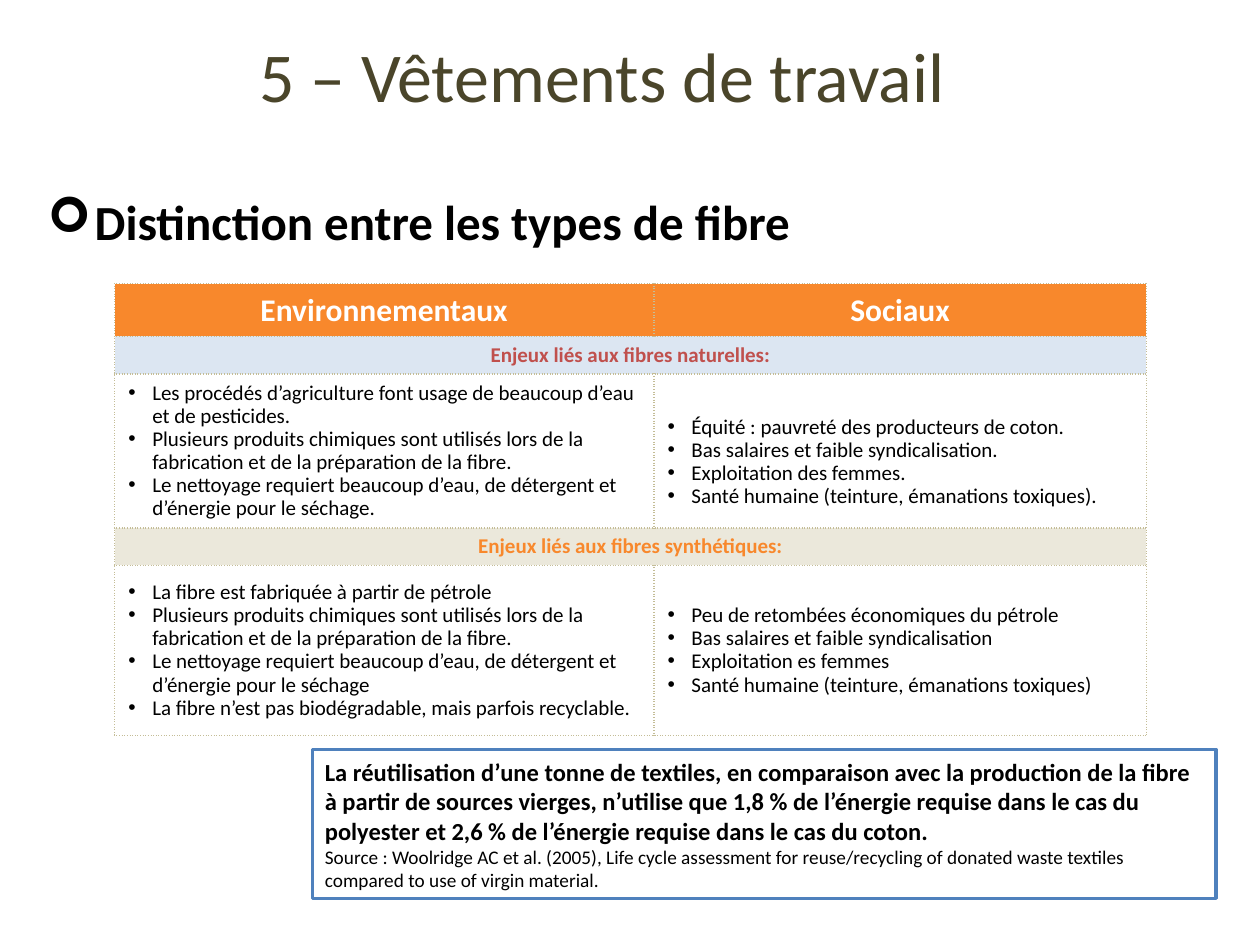
from lxml.etree import SubElement
from pptx import Presentation
from pptx.dml.color import RGBColor
from pptx.enum.shapes import MSO_SHAPE
from pptx.enum.text import MSO_ANCHOR, PP_ALIGN
from pptx.oxml.ns import qn
from pptx.util import Cm, Pt

# Content
TITLE = "5 – Vêtements de travail"
HEADING = "Distinction entre les types de fibre"
COLUMNS = ["Environnementaux", "Sociaux"]
SECTIONS = [
    {
        "name": "Enjeux liés aux fibres naturelles:", "color": "C0504D", "fill": "DCE6F2",
        "issues": [
            ["Les procédés d’agriculture font usage de beaucoup d’eau et de pesticides.",
             "Plusieurs produits chimiques sont utilisés lors de la fabrication et de la préparation de la fibre.",
             "Le nettoyage requiert beaucoup d’eau, de détergent et d’énergie pour le séchage."],
            ["Équité : pauvreté des producteurs de coton.",
             "Bas salaires et faible syndicalisation.",
             "Exploitation des femmes.",
             "Santé humaine (teinture, émanations toxiques)."],
        ],
        "extra_tops": [0, 0.46],
    },
    {
        "name": "Enjeux liés aux fibres synthétiques:", "color": "F8882C", "fill": "EBE8DB",
        "issues": [
            ["La fibre est fabriquée à partir de pétrole",
             "Plusieurs produits chimiques sont utilisés lors de la fabrication et de la préparation de la fibre.",
             "Le nettoyage requiert beaucoup d’eau, de détergent et d’énergie pour le séchage",
             "La fibre n’est pas biodégradable, mais parfois recyclable."],
            ["Peu de retombées économiques du pétrole",
             "Bas salaires et faible syndicalisation",
             "Exploitation es femmes",
             "Santé humaine (teinture, émanations toxiques)"],
        ],
        "extra_tops": [0, 0],
    },
]
FINDING = (
    "La réutilisation d’une tonne de textiles, en comparaison avec la production de la fibre "
    "à partir de sources vierges, n’utilise que 1,8 % de l’énergie requise dans le cas du "
    "polyester et 2,6 % de l’énergie requise dans le cas du coton."
)
CITATION = (
    "Source : Woolridge AC et al. (2005), Life cycle assessment for reuse/recycling of "
    "donated waste textiles compared to use of virgin material."
)

# Table measures in centimetres
COLUMN_WIDTHS = [10.87, 9.93]
ROW_HEIGHTS = [1.04, 0.69, 3.1, 0.71, 3.43]
MARGIN_X, MARGIN_Y = 0.28, 0.15


def rgb(value):
    return RGBColor.from_string(value)


def add_bullet(paragraph, character, font_name, indent):
    properties = paragraph._p.get_or_add_pPr()
    properties.set("marL", str(Cm(indent)))
    properties.set("indent", str(-Cm(indent)))
    SubElement(properties, qn("a:buFont"), typeface=font_name)
    SubElement(properties, qn("a:buChar"), char=character)


def write(frame, texts, size, color="000000", bold=False, align=PP_ALIGN.LEFT,
          spacing=None, bullet=None):
    """Fill a text frame with one paragraph per text."""
    frame.word_wrap = True
    for index, text in enumerate(texts):
        paragraph = frame.paragraphs[0] if index == 0 else frame.add_paragraph()
        paragraph.text = text
        paragraph.alignment = align
        if spacing:
            paragraph.line_spacing = spacing
        if bullet:
            add_bullet(paragraph, *bullet)
        font = paragraph.font
        font.name, font.size, font.bold = "Calibri", Pt(size), bold
        font.color.rgb = rgb(color)


def style_cell(cell, fill, extra_top=0):
    properties = cell._tc.get_or_add_tcPr()
    for side in ("lnL", "lnR", "lnT", "lnB"):
        line = SubElement(properties, qn(f"a:{side}"), w=str(Pt(1)))
        solid = SubElement(line, qn("a:solidFill"))
        SubElement(solid, qn("a:srgbClr"), val="C4BD97")
        SubElement(line, qn("a:prstDash"), val="sysDot")
    cell.fill.solid()
    cell.fill.fore_color.rgb = rgb(fill)
    cell.margin_left = cell.margin_right = Cm(MARGIN_X)
    cell.margin_top, cell.margin_bottom = Cm(MARGIN_Y + extra_top), Cm(MARGIN_Y)


presentation = Presentation()
presentation.slide_width, presentation.slide_height = Cm(25.4), Cm(19.05)
slide = presentation.slides.add_slide(presentation.slide_layouts[6])

# Title and heading
title = slide.shapes.add_textbox(Cm(0.71), Cm(0.53), Cm(22.86), Cm(3.18))
write(title.text_frame, [TITLE], 40, "4A452A", align=PP_ALIGN.CENTER)
heading = slide.shapes.add_textbox(Cm(0.71), Cm(3.73), Cm(24.41), Cm(2.95))
write(heading.text_frame, [HEADING], 28, bold=True, bullet=("➢", "Wingdings", 0.95))

# Table of issues
table = slide.shapes.add_table(
    len(ROW_HEIGHTS), len(COLUMN_WIDTHS), Cm(2.31), Cm(5.72),
    Cm(sum(COLUMN_WIDTHS)), Cm(sum(ROW_HEIGHTS))).table
table.horz_banding = False
for column, width in zip(table.columns, COLUMN_WIDTHS):
    column.width = Cm(width)
for row, height in zip(table.rows, ROW_HEIGHTS):
    row.height = Cm(height)

for column_index, name in enumerate(COLUMNS):
    cell = table.cell(0, column_index)
    style_cell(cell, "F8882C")
    write(cell.text_frame, [name], 18, "FFFFFF", True, PP_ALIGN.CENTER)

for section_index, section in enumerate(SECTIONS):
    band_row = 1 + 2 * section_index
    band = table.cell(band_row, 0)
    band.merge(table.cell(band_row, 1))
    for column_index, issues in enumerate(section["issues"]):
        style_cell(table.cell(band_row, column_index), section["fill"])
        cell = table.cell(band_row + 1, column_index)
        style_cell(cell, "FFFFFF", section["extra_tops"][column_index])
        cell.vertical_anchor = MSO_ANCHOR.MIDDLE
        write(cell.text_frame, issues, 12, spacing=0.9, bullet=("•", "Arial", 0.48))
    write(band.text_frame, [section["name"]], 12, section["color"], True,
          PP_ALIGN.CENTER, 0.9)

# Finding with its source
box = slide.shapes.add_shape(MSO_SHAPE.RECTANGLE, Cm(6.3), Cm(15.11), Cm(18.21), Cm(3))
box.shadow.inherit = False
box.fill.solid()
box.fill.fore_color.rgb = rgb("FFFFFF")
box.line.color.rgb = rgb("4F81BD")
box.line.width = Pt(2)
write(box.text_frame, [FINDING, CITATION], 14, bold=True)
citation = box.text_frame.paragraphs[1]
citation.font.size, citation.font.bold = Pt(11), False

presentation.save("out.pptx")
